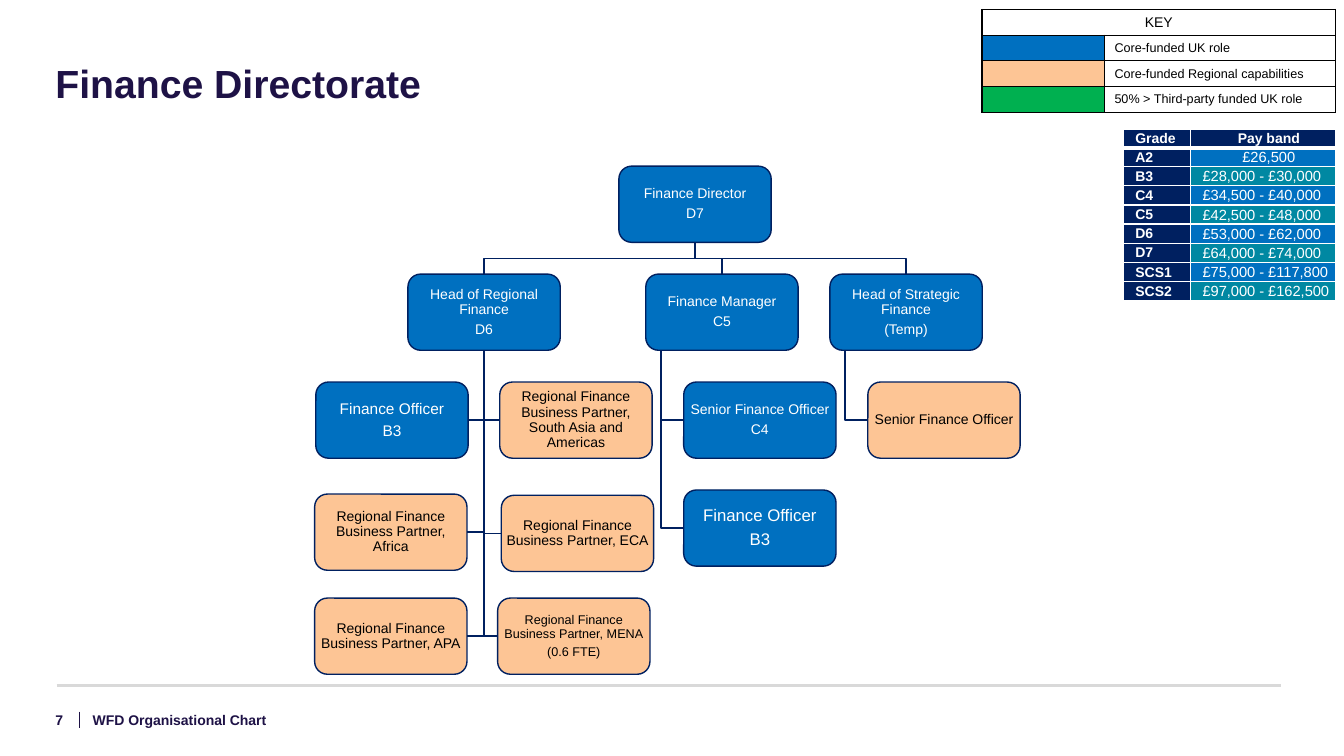
import pptx
import pptx.util
import pptx.dml.color
import pptx.enum.shapes
import pptx.enum.text
import pptx.oxml.ns
import lxml.etree

Pt = pptx.util.Pt
ALIGN = pptx.enum.text.PP_ALIGN
MIDDLE = pptx.enum.text.MSO_ANCHOR.MIDDLE
TOP = pptx.enum.text.MSO_ANCHOR.TOP
qn = pptx.oxml.ns.qn

HUES = {
    "ink": "1E1246", "navy": "002060", "blue": "0070C0", "peach": "FDC595",
    "green": "00B050", "teal": "0088A2", "grey": "D9D9D9",
    "white": "FFFFFF", "black": "000000",
}
BOX_W, BOX_H = 108.8, 54.4
DROP = 10.9  # offset of a side trunk from the left edge of its box


class Deck:
    def __init__(self, prs):
        self.font = "Arial"
        self.slide = prs.slides.add_slide(prs.slide_layouts[6])
        self.shapes = self.slide.shapes

    def hue(self, name):
        return pptx.dml.color.RGBColor.from_string(HUES[name])

    def fill_in(self, frame, lines, size, hue, bold=False, align=ALIGN.LEFT, lead=None, after=None):
        for i, line in enumerate(lines):
            para = frame.paragraphs[0] if i == 0 else frame.add_paragraph()
            para.alignment = align
            if lead:
                para.line_spacing = lead
            if after:
                para.space_after = Pt(after)
            run = para.add_run()
            run.text = line
            run.font.name, run.font.size, run.font.bold = self.font, Pt(size), bold
            run.font.color.rgb = self.hue(hue)

    def inset(self, item, left, top, right, bottom):
        item.margin_left, item.margin_top = Pt(left), Pt(top)
        item.margin_right, item.margin_bottom = Pt(right), Pt(bottom)

    def text(self, x, y, w, h, line, size, anchor=MIDDLE, lead=None):
        frame = self.shapes.add_textbox(Pt(x), Pt(y), Pt(w), Pt(h)).text_frame
        frame.word_wrap = True
        frame.vertical_anchor = anchor
        self.inset(frame, 0, 0, 0, 0)
        self.fill_in(frame, [line], size, "ink", True, lead=lead)

    def rule(self, x1, y1, x2, y2, hue, width):
        kind = pptx.enum.shapes.MSO_CONNECTOR.STRAIGHT
        line = self.shapes.add_connector(kind, Pt(x1), Pt(y1), Pt(x2), Pt(y2))
        line.line.color.rgb = self.hue(hue)
        line.line.width = Pt(width)
        lxml.etree.SubElement(line._element.spPr, qn("a:effectLst"))

    def bend(self, dots):
        dots = [(Pt(x), Pt(y)) for x, y in dots]
        pen = self.shapes.build_freeform(*dots[0])
        pen.add_line_segments(dots[1:], close=False)
        shape = pen.convert_to_shape()
        shape.shadow.inherit = False
        shape.fill.background()
        shape.line.color.rgb = self.hue("navy")
        shape.line.width = Pt(1)

    def box(self, x, y, fill, lines, size):
        kind = pptx.enum.shapes.MSO_SHAPE.ROUNDED_RECTANGLE
        shape = self.shapes.add_shape(kind, Pt(x), Pt(y), Pt(BOX_W), Pt(BOX_H))
        shape.shadow.inherit = False
        shape.fill.solid()
        shape.fill.fore_color.rgb = self.hue(fill)
        shape.line.color.rgb = self.hue("navy")
        shape.line.width = Pt(1)
        frame = shape.text_frame
        frame.word_wrap = True
        frame.vertical_anchor = MIDDLE
        self.inset(frame, 0.7, 0.7, 0.7, 0.7)
        ink = "white" if fill == "blue" else "black"
        self.fill_in(frame, lines, size, ink, align=ALIGN.CENTER, lead=0.9, after=0.35 * size)

    def table(self, x, y, cols, rows):
        frame = self.shapes.add_table(len(rows), len(cols), Pt(x), Pt(y), Pt(sum(cols)), Pt(sum(rows)))
        table = frame.table
        for col, width in zip(table.columns, cols):
            col.width = Pt(width)
        for row, height in zip(table.rows, rows):
            row.height = Pt(height)
        return table

    def cell(self, cell, fill, edge, pads, line="", size=9, hue="black", bold=False, align=ALIGN.LEFT, base=1):
        cell.vertical_anchor = MIDDLE
        self.inset(cell, *pads)
        if line:
            self.fill_in(cell.text_frame, [line], size, hue, bold, align)
        else:
            para = cell.text_frame.paragraphs[0]._p
            lxml.etree.SubElement(para, qn("a:endParaRPr"), sz=str(size * 100))
        props = cell._tc.get_or_add_tcPr()
        for side, width in (("L", 1), ("R", 1), ("T", 1), ("B", base)):
            border = lxml.etree.SubElement(props, qn("a:ln" + side), w=str(Pt(width)))
            solid = lxml.etree.SubElement(border, qn("a:solidFill"))
            lxml.etree.SubElement(solid, qn("a:srgbClr"), val=HUES[edge])
        cell.fill.solid()
        cell.fill.fore_color.rgb = self.hue(fill)


# name: x, y, fill, lines, size, parent
ROW1, ROW2, ROW3, ROW4 = [118.7 + 77.1 * i for i in range(4)]
PARTNER = "Regional Finance Business Partner, "
ROLES = {
    "chief": (442.1, ROW1, "blue", ["Finance Director", "D7"], 10, None),
    "region": (291.4, ROW2, "blue", ["Head of Regional Finance", "D6"], 10, "chief"),
    "manage": (461.3, ROW2, "blue", ["Finance Manager", "C5"], 10, "chief"),
    "plan": (592.8, ROW2, "blue", ["Head of Strategic Finance", "(Temp)"], 10, "chief"),
    "clerk": (225.6, ROW3, "blue", ["Finance Officer", "B3"], 11, "region"),
    "south": (357, ROW3, "peach", [PARTNER + "South Asia and Americas"], 10, "region"),
    "africa": (224.8, 352.9, "peach", [PARTNER + "Africa"], 10, "region"),
    "eca": (358.1, 353.8, "peach", [PARTNER + "ECA"], 10, "region"),
    "apa": (224.8, 427.2, "peach", [PARTNER + "APA"], 10, "region"),
    "mena": (355.5, 427.2, "peach", [PARTNER + "MENA", "(0.6 FTE)"], 9, "region"),
    "senior": (488.4, ROW3, "blue", ["Senior Finance Officer", "C4"], 10, "manage"),
    "junior": (488.4, ROW4, "blue", ["Finance Officer", "B3"], 12, "manage"),
    "temp": (619.9, ROW3, "peach", ["Senior Finance Officer"], 10, "plan"),
}
KEYS = [("blue", "Core-funded UK role"), ("peach", "Core-funded Regional capabilities"),
        ("green", "50% > Third-party funded UK role")]
BANDS = [("A2", "£26,500"), ("B3", "£28,000 - £30,000"), ("C4", "£34,500 - £40,000"),
         ("C5", "£42,500 - £48,000"), ("D6", "£53,000 - £62,000"), ("D7", "£64,000 - £74,000"),
         ("SCS1", "£75,000 - £117,800"), ("SCS2", "£97,000 - £162,500")]


def main():
    prs = pptx.Presentation()
    prs.slide_width, prs.slide_height = Pt(960), Pt(540)
    deck = Deck(prs)

    # Title and footer
    deck.rule(56.9, 508.3, 56.9, 519.8, "ink", 0.75)
    deck.rule(40.5, 489.6, 915, 489.6, "grey", 2)
    deck.text(39.6, 46.1, 874.8, 72, "Finance Directorate", 28, TOP, 0.9)
    deck.text(66.2, 505.4, 365.8, 17.3, "WFD Organisational Chart", 10)
    deck.text(39.6, 505.4, 26.6, 17.3, "7", 10)

    # Lines from each role to its parent
    for x, y, _, _, _, boss in ROLES.values():
        if not boss:
            continue
        left, top = ROLES[boss][:2]
        low, mid = top + BOX_H, left + BOX_W / 2
        if boss == "chief":
            turn, end = (low + y) / 2, x + BOX_W / 2
            deck.bend([(mid, low), (mid, turn), (end, turn), (end, y)])
        else:
            trunk = mid if boss == "region" else left + DROP
            side = x if x > trunk else x + BOX_W
            deck.bend([(trunk, low), (trunk, y + BOX_H / 2), (side, y + BOX_H / 2)])

    # Role boxes
    for x, y, fill, lines, size, _ in ROLES.values():
        deck.box(x, y, fill, lines, size)

    # Colour key
    pads = (7.2, 2, 7.2, 2)
    key = deck.table(701.4, 6.7, [87.5, 165.2], [18.4] * 4)
    key.cell(0, 0).merge(key.cell(0, 1))
    deck.cell(key.cell(0, 0), "white", "black", pads, "KEY", 10, align=ALIGN.CENTER)
    deck.cell(key.cell(0, 1), "white", "black", pads)
    for i, (fill, label) in enumerate(KEYS, 1):
        deck.cell(key.cell(i, 0), fill, "black", pads)
        deck.cell(key.cell(i, 1), "white", "black", pads, label)

    # Pay bands
    pads = (8.6, 0.7, 0.7, 0)
    pay = deck.table(802.4, 92.5, [48, 103.9], [13] + [13.65] * 8)
    for i, (grade, band) in enumerate([("Grade", "Pay band")] + BANDS):
        head = i == 0
        fill = "navy" if head else "blue" if i % 2 else "teal"
        align = ALIGN.CENTER if i < 2 else ALIGN.LEFT
        base = 3 if head else 1
        deck.cell(pay.cell(i, 0), "navy", "white", pads, grade, 10, "white", True, base=base)
        deck.cell(pay.cell(i, 1), fill, "white", pads, band, 10 if head else 10.5, "white", head, align, base)

    prs.save("out.pptx")


if __name__ == "__main__":
    main()
